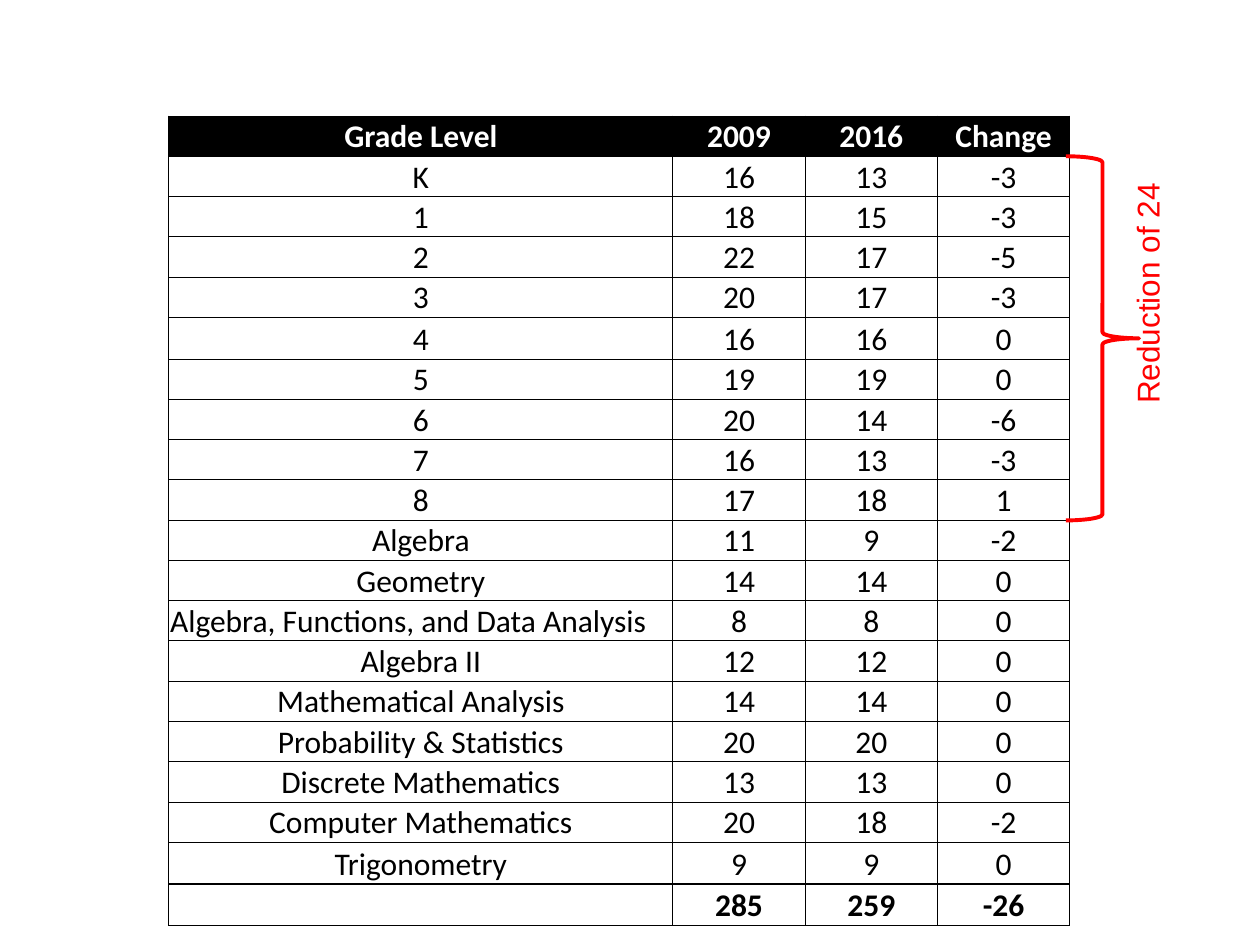
"""Build a slide that compares counts by grade level in 2009 and 2016."""
import pptx
import pptx.dml.color
import pptx.enum.shapes
import pptx.enum.text
import pptx.oxml
import pptx.oxml.ns
import pptx.util

BLACK = pptx.dml.color.RGBColor(0, 0, 0)
WHITE = pptx.dml.color.RGBColor(255, 255, 255)
RED = pptx.dml.color.RGBColor(255, 0, 0)
CENTER = pptx.enum.text.PP_ALIGN.CENTER
LEFT = pptx.enum.text.PP_ALIGN.LEFT
inch = pptx.util.Inches


def write(frame, text, font="Calibri", size=18, color=BLACK, bold=False, align=CENTER):
    para = frame.paragraphs[0]
    para.alignment = align
    run = para.add_run()
    run.text = text
    run.font.name = font
    run.font.size = pptx.util.Pt(size)
    run.font.bold = bold
    run.font.color.rgb = color


def edge(cell, thick):
    props = cell._tc.get_or_add_tcPr()
    for spot, side in enumerate("LRTB"):
        width = pptx.util.Pt(1.5 if side == thick else 0.5)
        line = pptx.oxml.parse_xml(
            f'<a:ln{side} {pptx.oxml.ns.nsdecls("a")} w="{width}"><a:solidFill>'
            f'<a:srgbClr val="{BLACK}"/></a:solidFill></a:ln{side}>')
        props.insert(spot, line)


LONG = "Algebra, Functions, and Data Analysis"
DATA = [
    ("Grade Level", "2009", "2016", "Change"),
    ("K", "16", "13", "-3"),
    ("1", "18", "15", "-3"),
    ("2", "22", "17", "-5"),
    ("3", "20", "17", "-3"),
    ("4", "16", "16", "0"),
    ("5", "19", "19", "0"),
    ("6", "20", "14", "-6"),
    ("7", "16", "13", "-3"),
    ("8", "17", "18", "1"),
    ("Algebra", "11", "9", "-2"),
    ("Geometry", "14", "14", "0"),
    (LONG, "8", "8", "0"),
    ("Algebra II", "12", "12", "0"),
    ("Mathematical Analysis", "14", "14", "0"),
    ("Probability & Statistics", "20", "20", "0"),
    ("Discrete Mathematics", "13", "13", "0"),
    ("Computer Mathematics", "20", "18", "-2"),
    ("Trigonometry", "9", "9", "0"),
    ("", "285", "259", "-26"),
]
COLS = [4, 1.05, 1.05, 1.05]
TALL = (5, 18, 19)
ROWS = [0.33 if row in TALL else 0.32 for row in range(len(DATA))]
X, Y = 1.34, 0.92
LAST = len(DATA) - 1

deck = pptx.Presentation()
deck.slide_width, deck.slide_height = inch(10), inch(7.5)
slide = deck.slides.add_slide(deck.slide_layouts[6])

table = slide.shapes.add_table(len(ROWS), len(COLS), inch(X), inch(Y),
                               inch(sum(COLS)), inch(sum(ROWS))).table
table.horz_banding = False
for col, width in zip(table.columns, COLS):
    col.width = inch(width)
for num, (row, height, words) in enumerate(zip(table.rows, ROWS, DATA)):
    row.height = inch(height)
    head = num == 0
    thick = {LAST - 1: "B", LAST: "T"}.get(num)
    for cell, text in zip(row.cells, words):
        cell.margin_left = cell.margin_right = cell.margin_top = inch(0.01)
        cell.margin_bottom = 0
        cell.vertical_anchor = pptx.enum.text.MSO_ANCHOR.BOTTOM
        if head:
            cell.fill.solid()
            cell.fill.fore_color.rgb = BLACK
        else:
            cell.fill.background()
        edge(cell, thick)
        write(cell.text_frame, text, color=WHITE if head else BLACK,
              bold=num in (0, LAST), align=LEFT if text == LONG else CENTER)

label = slide.shapes.add_textbox(inch(7.98), inch(2.13), inch(2.25), inch(0.4))
label.rotation = 270
label.text_frame.word_wrap = True
write(label.text_frame, "Reduction of 24", font="Arial", color=RED)

brace = slide.shapes.add_shape(
    pptx.enum.shapes.MSO_SHAPE.RIGHT_BRACE, inch(X + sum(COLS) - 0.03),
    inch(Y + ROWS[0]), inch(0.58), inch(sum(ROWS[1:10])))
brace.shadow.inherit = False
brace.fill.background()
brace.line.color.rgb = RED
brace.line.width = pptx.util.Pt(2.25)

deck.save("out.pptx")
